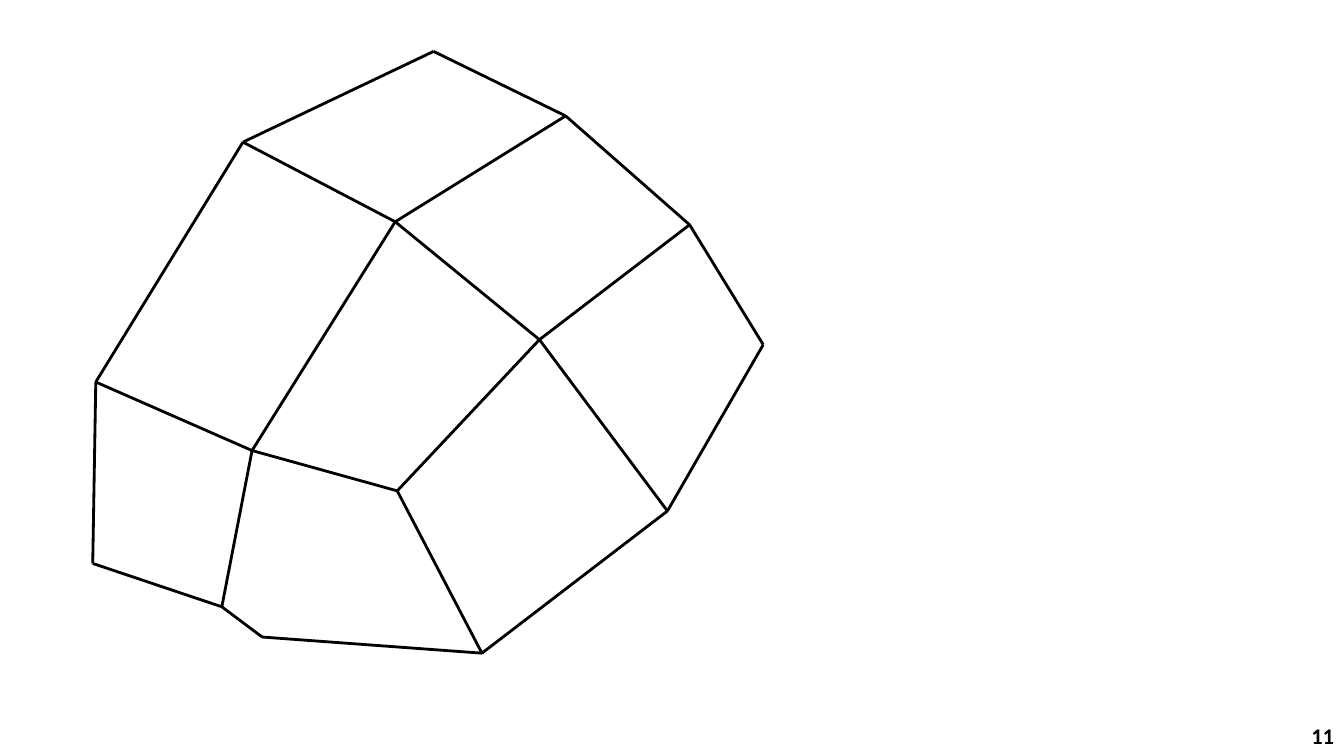
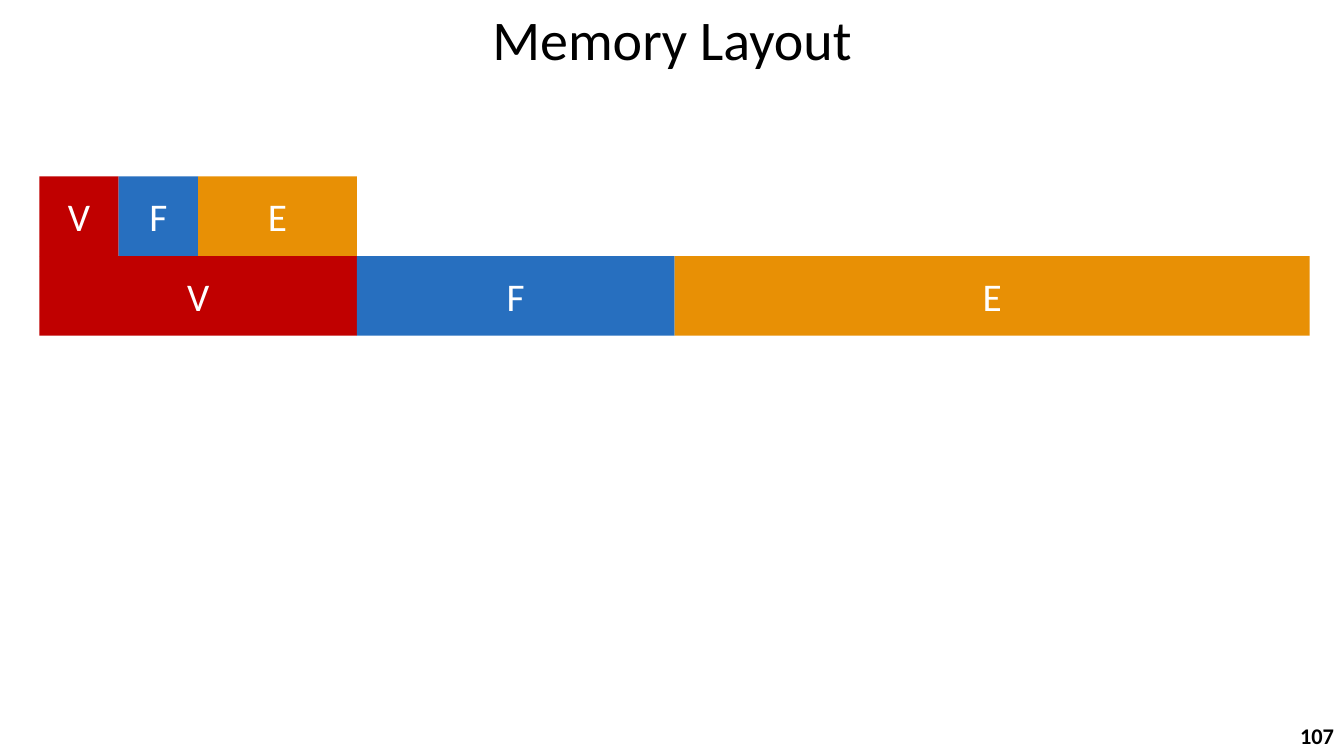
import pptx
import pptx.dml.color
import pptx.enum.shapes
import pptx.enum.text
import pptx.oxml
import pptx.oxml.ns
import pptx.util

Inches = pptx.util.Inches
Pt = pptx.util.Pt
Align = pptx.enum.text.PP_ALIGN
Anchor = pptx.enum.text.MSO_ANCHOR

COLORS = {"ink": "000000", "paper": "FFFFFF", "V": "C00000", "F": "276FBF", "E": "E89005"}

VERTICES = {
    "A": (5.35, 3.37), "B": (6.62, 5.07), "C": (7.57, 3.42), "D": (6.84, 2.23),
    "E": (5.61, 1.15), "F": (3.92, 2.2), "G": (2.5, 4.47), "H": (3.94, 4.87),
    "I": (4.78, 6.48), "J": (2.6, 6.32), "K": (2.2, 6.02), "L": (2.41, 1.41),
    "M": (0.95, 3.79), "N": (0.92, 5.59), "O": (4.3, 0.51),
}
FACES = ["ABCD", "ADEF", "AFGH", "AHIB", "HIJKG", "FLMG", "GMNK", "FLOE"]

BLOCK_LEFT, BLOCK_TOP, BLOCK_HEIGHT = 0.39, 1.75, 0.79
CELL_WIDTH = 12.6 / 16
BLOCK_CELLS = {"V": 1, "F": 1, "E": 2}
ROW_SCALES = [1, 4]


class Deck:
    """Hold the shared style and the slide being drawn."""

    def __init__(self):
        self.presentation = pptx.Presentation()
        self.presentation.slide_width = Inches(13.33)
        self.presentation.slide_height = Inches(7.5)
        self.slide = None

    def color(self, name):
        return pptx.dml.color.RGBColor.from_string(COLORS[name])

    def new_slide(self, number):
        layout = self.presentation.slide_layouts[6]
        self.slide = self.presentation.slides.add_slide(layout)
        box = self.text_box(10.33, 7.1, 3, 0.4)
        box.text_frame.vertical_anchor = Anchor.MIDDLE
        self.add_text(box, str(number), Align.RIGHT, "ink", size=Pt(16), bold=True)

    def text_box(self, left, top, width, height):
        box = self.slide.shapes.add_textbox(*map(Inches, (left, top, width, height)))
        box.text_frame.word_wrap = True
        return box

    def add_text(self, shape, text, alignment, color, **font_format):
        paragraph = shape.text_frame.paragraphs[0]
        paragraph.alignment = alignment
        run = paragraph.add_run()
        run.text = text
        for name, value in {"name": "Calibri", **font_format}.items():
            setattr(run.font, name, value)
        run.font.color.rgb = self.color(color)

    def title(self, text):
        box = self.text_box(2.37, 0, 8.59, 0.77)
        box.text_frame.auto_size = pptx.enum.text.MSO_AUTO_SIZE.SHAPE_TO_FIT_TEXT
        self.add_text(box, text, Align.CENTER, "ink", size=Pt(40))

    def block(self, label, left, top, width, height):
        shape = self.slide.shapes.add_shape(
            pptx.enum.shapes.MSO_SHAPE.RECTANGLE, *map(Inches, (left, top, width, height)))
        shape.shadow.inherit = False
        shape.fill.solid()
        shape.fill.fore_color.rgb = self.color(label)
        shape.line.fill.background()
        shape.text_frame.vertical_anchor = Anchor.MIDDLE
        self.add_text(shape, label, Align.CENTER, "paper", size=Pt(28))

    def edge(self, group, start, end):
        connector = group.shapes.add_connector(
            pptx.enum.shapes.MSO_CONNECTOR.STRAIGHT, *map(Inches, (*start, *end)))
        connector.line.color.rgb = self.color("ink")
        connector.line.width = Pt(2)
        properties = connector._element.spPr
        properties.append(pptx.oxml.parse_xml(
            f'<a:effectLst {pptx.oxml.ns.nsdecls("a")}/>'))

    def mesh(self, vertices, faces):
        group = self.slide.shapes.add_group_shape()
        edges = dict.fromkeys(
            tuple(sorted(pair)) for face in faces for pair in zip(face, face[1:] + face[0]))
        for start, end in edges:
            self.edge(group, vertices[start], vertices[end])


def main():
    deck = Deck()

    deck.new_slide(11)
    deck.mesh(VERTICES, FACES)

    deck.new_slide(107)
    deck.title("Memory Layout")
    for row, scale in enumerate(ROW_SCALES):
        left = BLOCK_LEFT
        for label, cells in BLOCK_CELLS.items():
            width = cells * scale * CELL_WIDTH
            deck.block(label, left, BLOCK_TOP + row * BLOCK_HEIGHT, width, BLOCK_HEIGHT)
            left += width

    deck.presentation.save("out.pptx")


if __name__ == "__main__":
    main()
